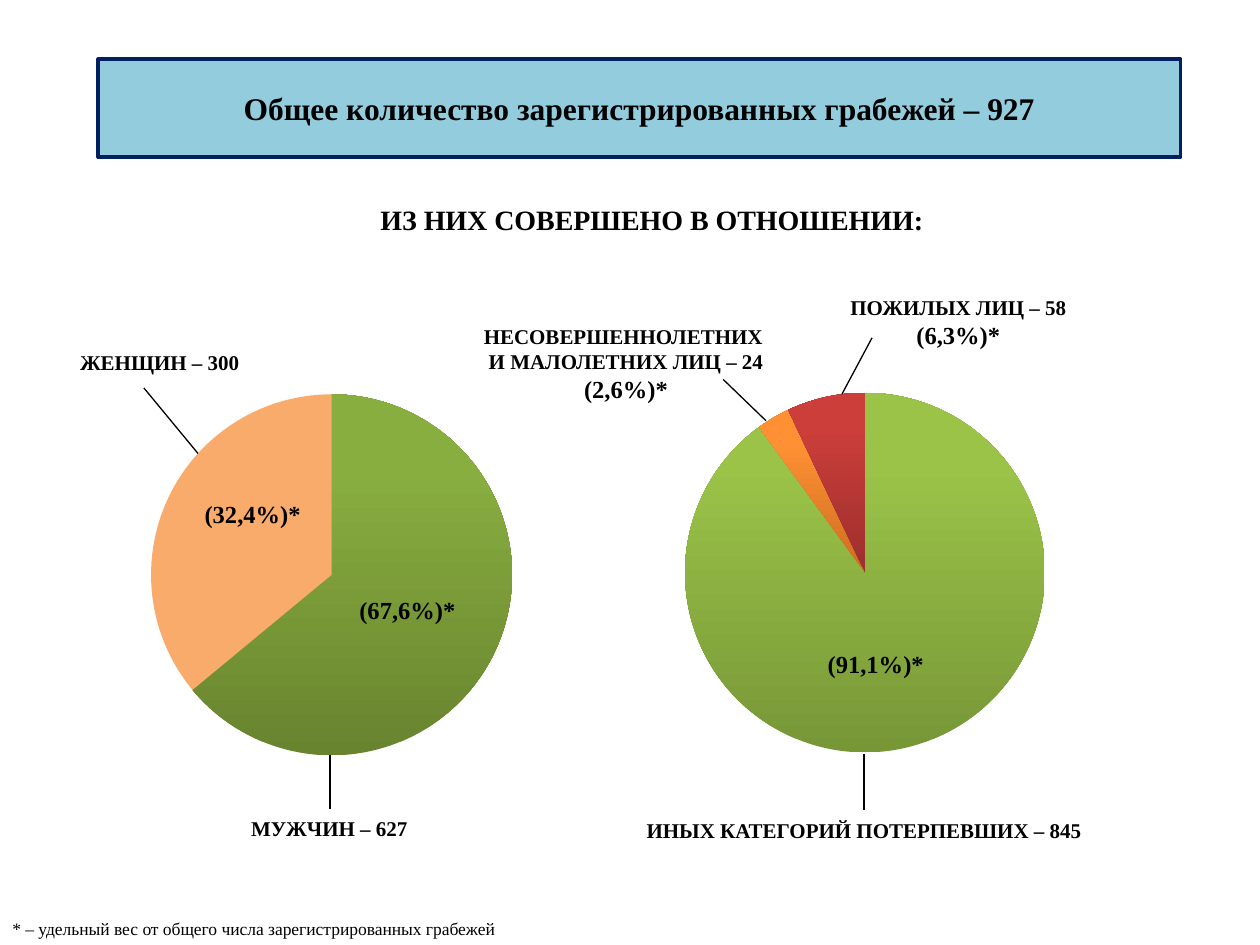
from lxml import etree
from pptx import Presentation
from pptx.chart.data import CategoryChartData
from pptx.dml.color import RGBColor
from pptx.enum.chart import XL_CHART_TYPE
from pptx.enum.shapes import MSO_CONNECTOR
from pptx.enum.text import MSO_ANCHOR, MSO_AUTO_SIZE, PP_ALIGN
from pptx.oxml import parse_xml
from pptx.oxml.ns import nsdecls, qn
from pptx.util import Cm, Pt

PIE = XL_CHART_TYPE.PIE
STRAIGHT = MSO_CONNECTOR.STRAIGHT
TOP, MIDDLE = MSO_ANCHOR.TOP, MSO_ANCHOR.MIDDLE
LEFT, CENTER = PP_ALIGN.LEFT, PP_ALIGN.CENTER
FONT = "Times New Roman"
BLACK = "000000"

# Content: all places are in centimetres (left, top, width, height)
TITLE = "Общее количество зарегистрированных грабежей – 927"
TITLE_BOX = (1.98, 1.19, 21.82, 1.98)
SUBTITLE = "ИЗ НИХ СОВЕРШЕНО В ОТНОШЕНИИ:"
SUBTITLE_BOX = (7.34, 3.96, 11.61, 0.94)
FOOTNOTE = "* – удельный вес от общего числа зарегистрированных грабежей"
FOOTNOTE_BOX = (0, 18.39, 13.16, 0.66)

# Each slice: value, then one colour or a gradient from bottom to top
PIES = [
    {"box": (1.07, 7.59, 11.23, 8), "plot": (0.175, 0.045, 0.65, 0.91),
     "slices": [(64, ("68842F", "89AE40")), (36, ("F9AB6B",))]},
    {"box": (10.67, 5.51, 13.67, 11.81), "plot": (0.229, 0.204, 0.532, 0.614),
     "slices": [(90, ("779737", "9BC348")), (3, ("CC6E20", "FF9034")),
                (7, ("9C2F2D", "CB3E3A"))]},
]

# Each label: box, anchor, paragraphs made of (text, size) runs
LABELS = [
    ((16.69, 5.82, 5.26, 1.32), TOP,
     [[("ПОЖИЛЫХ ЛИЦ – 58 ", 12), ("(6,3%)*", 14)]]),
    ((9.47, 6.4, 6.3, 1.8), TOP,
     [[("НЕСОВЕРШЕННОЛЕТНИХ ", 12)],
      [("И МАЛОЛЕТНИХ ЛИЦ – 24 ", 12), ("(2,6%)*", 14)]]),
    ((6.93, 11.79, 2.57, 0.99), MIDDLE, [[("(67,6%)*", 14)]]),
    ((3.81, 9.86, 2.57, 0.99), MIDDLE, [[("(32,4%)*", 14)]]),
    ((16.41, 12.88, 2.49, 0.99), MIDDLE, [[("(91,1%)*", 14)]]),
    ((1.19, 6.93, 4.06, 0.74), MIDDLE, [[("ЖЕНЩИН – 300", 12)]]),
    ((4.52, 16.33, 4.24, 0.74), MIDDLE, [[("МУЖЧИН – 627", 12)]]),
    ((12.01, 16.36, 10.82, 0.74), MIDDLE,
     [[("ИНЫХ КАТЕГОРИЙ ПОТЕРПЕВШИХ – 845", 12)]]),
]

# Leader lines: x1, y1, x2, y2
LEADERS = [
    (16.97, 7.95, 17.58, 6.81),
    (14.58, 7.65, 15.44, 8.48),
    (2.9, 7.82, 3.99, 9.14),
    (6.65, 15.21, 6.65, 16.31),
    (17.42, 15.19, 17.42, 16.33),
]


def color(hex_value):
    return RGBColor.from_string(hex_value)


def lengths(values):
    return [Cm(value) for value in values]


def set_font(font, size, bold=True):
    font.name = FONT
    font.size = Pt(size)
    font.bold = bold
    font.color.rgb = color(BLACK)


def add_text(slide, box, paragraphs, anchor=TOP, align=CENTER, bold=True, wrap=True):
    frame = slide.shapes.add_textbox(*lengths(box)).text_frame
    frame.word_wrap = wrap
    frame.vertical_anchor = anchor
    for index, runs in enumerate(paragraphs):
        paragraph = frame.add_paragraph() if index else frame.paragraphs[0]
        paragraph.alignment = align
        set_font(paragraph.font, runs[0][1], bold)
        for text, size in runs:
            run = paragraph.add_run()
            run.text = text
            if size != runs[0][1]:
                run.font.size = Pt(size)


def add_title(slide):
    title = slide.shapes.title
    title.left, title.top, title.width, title.height = lengths(TITLE_BOX)
    title._element.spPr.append(parse_xml(
        f'<a:prstGeom {nsdecls("a")} prst="roundRect"><a:avLst/></a:prstGeom>'))
    title.fill.solid()
    title.fill.fore_color.rgb = color("93CDDD")
    title.line.color.rgb = color("002060")
    title.line.width = Pt(2)
    frame = title.text_frame
    frame.text = TITLE
    frame.auto_size = MSO_AUTO_SIZE.NONE
    frame.vertical_anchor = MIDDLE
    frame.paragraphs[0].alignment = CENTER
    set_font(frame.paragraphs[0].font, 18)


def set_plot_layout(chart, plot):
    area = chart._chartSpace.chart.plotArea
    for old in area.findall(qn("c:layout")):
        area.remove(old)
    layout = etree.Element(qn("c:layout"))
    manual = etree.SubElement(layout, qn("c:manualLayout"))
    settings = [("layoutTarget", "inner"), ("xMode", "edge"), ("yMode", "edge")]
    settings += zip("xywh", plot)
    for name, value in settings:
        etree.SubElement(manual, qn(f"c:{name}")).set("val", str(value))
    area.insert(0, layout)


def add_pie(slide, box, plot, slices):
    data = CategoryChartData()
    data.categories = [str(number + 1) for number in range(len(slices))]
    data.add_series("Series 1", [value for value, _ in slices])
    chart = slide.shapes.add_chart(PIE, *lengths(box), data).chart
    chart.has_title = False
    chart.has_legend = False
    chart.font.name = "Calibri"
    chart.font.size = Pt(10)
    chart.font.color.rgb = color(BLACK)
    chart.plots[0].vary_by_categories = True
    set_plot_layout(chart, plot)
    for index, (_, colors) in enumerate(slices):
        style = chart.plots[0].series[0].points[index].format
        style.line.fill.background()
        if len(colors) == 1:
            style.fill.solid()
            style.fill.fore_color.rgb = color(colors[0])
            continue
        style.fill.gradient()
        style.fill.gradient_angle = 90
        for stop, position, shade in zip(style.fill.gradient_stops, (0, 0.8), colors):
            stop.position = position
            stop.color.rgb = color(shade)


def add_leader(slide, ends):
    leader = slide.shapes.add_connector(STRAIGHT, *lengths(ends))
    leader.line.color.rgb = color(BLACK)
    leader.line.width = Pt(0.75)
    etree.SubElement(leader._element.spPr, qn("a:effectLst"))


def main():
    presentation = Presentation()
    presentation.slide_width, presentation.slide_height = Cm(25.4), Cm(19.05)
    slide = presentation.slides.add_slide(presentation.slide_layouts[5])

    # Headings and footnote
    add_title(slide)
    add_text(slide, SUBTITLE_BOX, [[(SUBTITLE, 16)]], wrap=False)
    add_text(slide, FOOTNOTE_BOX, [[(FOOTNOTE, 10)]], align=LEFT, bold=False)

    # Pies with their labels and leader lines
    for pie in PIES:
        add_pie(slide, **pie)
    for box, anchor, paragraphs in LABELS:
        add_text(slide, box, paragraphs, anchor)
    for ends in LEADERS:
        add_leader(slide, ends)

    presentation.save("out.pptx")


if __name__ == "__main__":
    main()
